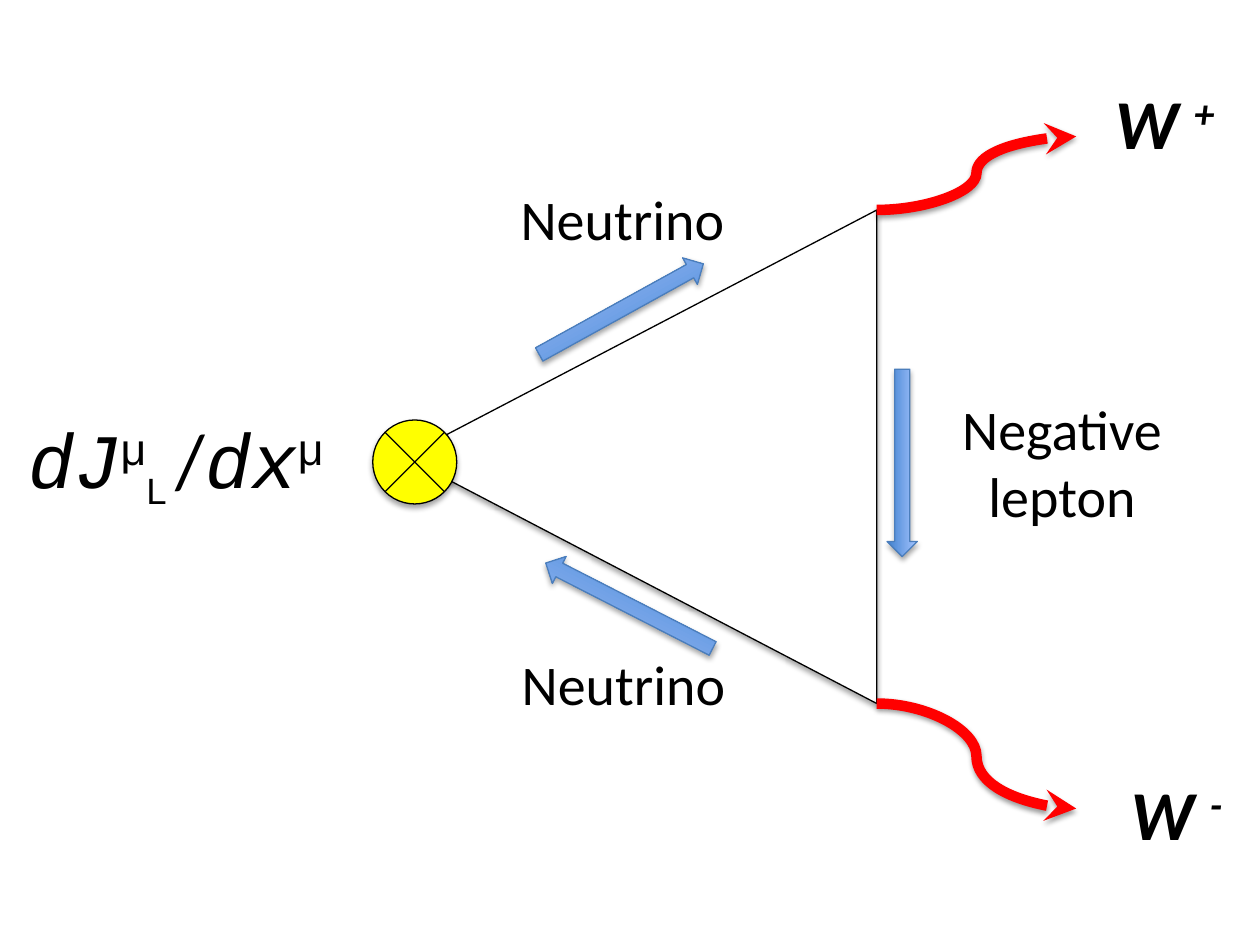
"""Builds a slide with a triangle diagram of a lepton current decaying to W bosons."""
from lxml.etree import SubElement
from pptx import Presentation
from pptx.dml.color import RGBColor
from pptx.enum.shapes import MSO_CONNECTOR, MSO_SHAPE as SHAPE
from pptx.enum.text import MSO_AUTO_SIZE as AUTO, PP_ALIGN as ALIGN
from pptx.oxml.ns import qn
from pptx.util import Inches, Pt

COLORS = {"black": "000000", "white": "FFFFFF", "vertex": "FFFF00", "boson": "FF0000",
          "arrow_dark": "3F80CE", "arrow_light": "A4C4FF", "arrow_line": "4B7EBC"}
WIDTH, HEIGHT = 10, 7.5
COLS, ROWS = 120, 90

LOOP = (37.5, 21, 47, 45)
VERTEX = (35.5, 40, 8, 8)
ARROW_SIZE = (17.85, 2.88)
ARROWS = [(50.25, 28, 331.1), (51, 56.25, 207.1), (77, 42.65, 90)]
BOSON_X = (83.5, 102.5)
BOSON_YS = [(20, 13), (67, 77)]

MONO = {"font": "Courier New", "size": 44, "italic": True}
MU = ("μ", {"font": "Arial", "size": 44, "base": 30})
CURRENT = [("dJ", MONO), MU, ("L ", {"font": "Arial", "size": 36, "base": -25}),
           ("/", {"size": 44}), ("dx", MONO), MU]
BOSON = {"size": 40, "bold": True, "italic": True}


def boson_name(sign):
    return [("W ", BOSON), (sign, {**BOSON, "base": 30})]


LABELS = [
    ((1.5, 38.6, 34, 10.1), [CURRENT], {}),
    ((105, 7, 14.5, 9.25), [boson_name("+")], {"wrap": False}),
    ((106.5, 72.75, 12.75, 9.25), [boson_name("-")], {"wrap": False}),
    ((48.4, 17, 29.2, 7.65), [[("Neutrino", {})]], {}),
    ((48.5, 61.3, 29.2, 7.65), [[("Neutrino", {})]], {}),
    ((89.4, 37, 23.5, 14.15), [[("Negative", {})], [("lepton", {})]], {"align": ALIGN.CENTER}),
]


def rgb(name):
    return RGBColor.from_string(COLORS[name])


def x(col):
    return Inches(col * WIDTH / COLS)


def y(row):
    return Inches(row * HEIGHT / ROWS)


def place(box):
    left, top, width, height = box
    return x(left), y(top), x(width), y(height)


def set_line(s, color, width):
    s.line.color.rgb = rgb(color)
    s.line.width = Pt(width)


def add_shadow(s, alpha, dist):
    effects = SubElement(s._element.spPr, qn("a:effectLst"))
    outer = SubElement(effects, qn("a:outerShdw"), blurRad=str(Pt(3.1)), dist=str(Pt(dist)),
                       dir="5400000", rotWithShape="0")
    color = SubElement(outer, qn("a:srgbClr"), val=COLORS["black"])
    SubElement(color, qn("a:alpha"), val=str(alpha * 1000))


def add_part(shapes, kind, box, fill, line="black", rotation=0):
    s = shapes.add_shape(kind, *place(box))
    s.rotation = rotation
    if isinstance(fill, tuple):
        s.fill.gradient()
        s.fill.gradient_angle = 90
        for stop, name in zip(s.fill.gradient_stops, fill):
            stop.color.rgb = rgb(name)
    else:
        s.fill.solid()
        s.fill.fore_color.rgb = rgb(fill)
    set_line(s, line, 0.75)
    add_shadow(s, 35, 1.8)


def add_boson(shapes, start, end):
    s = shapes.add_connector(MSO_CONNECTOR.CURVE, x(BOSON_X[0]), y(start), x(BOSON_X[1]), y(end))
    set_line(s, "boson", 6)
    SubElement(s.line._get_or_add_ln(), qn("a:tailEnd"), type="stealth")
    add_shadow(s, 38, 1.6)


def add_run(p, text, font="Calibri", size=32, bold=False, italic=False, base=0):
    r = p.add_run()
    r.text = text
    r.font.name, r.font.size = font, Pt(size)
    r.font.bold, r.font.italic = bold, italic
    r.font.color.rgb = rgb("black")
    if base:
        r._r.get_or_add_rPr().set("baseline", str(base * 1000))


def add_label(shapes, box, lines, wrap=True, align=ALIGN.LEFT):
    tf = shapes.add_textbox(*place(box)).text_frame
    tf.word_wrap = wrap
    tf.auto_size = AUTO.SHAPE_TO_FIT_TEXT
    for i, runs in enumerate(lines):
        p = tf.add_paragraph() if i else tf.paragraphs[0]
        p.alignment = align
        for text, style in runs:
            add_run(p, text, **style)


def main():
    prs = Presentation()
    prs.slide_width, prs.slide_height = Inches(WIDTH), Inches(HEIGHT)
    shapes = prs.slides.add_slide(prs.slide_layouts[6]).shapes
    add_part(shapes, SHAPE.ISOSCELES_TRIANGLE, LOOP, "white", rotation=270)
    add_part(shapes, SHAPE.FLOWCHART_SUMMING_JUNCTION, VERTEX, "vertex")
    for left, top, angle in ARROWS:
        add_part(shapes, SHAPE.RIGHT_ARROW, (left, top, *ARROW_SIZE),
                 ("arrow_dark", "arrow_light"), "arrow_line", angle)
    for start, end in BOSON_YS:
        add_boson(shapes, start, end)
    for box, lines, style in LABELS:
        add_label(shapes, box, lines, **style)
    prs.save("out.pptx")


if __name__ == "__main__":
    main()
